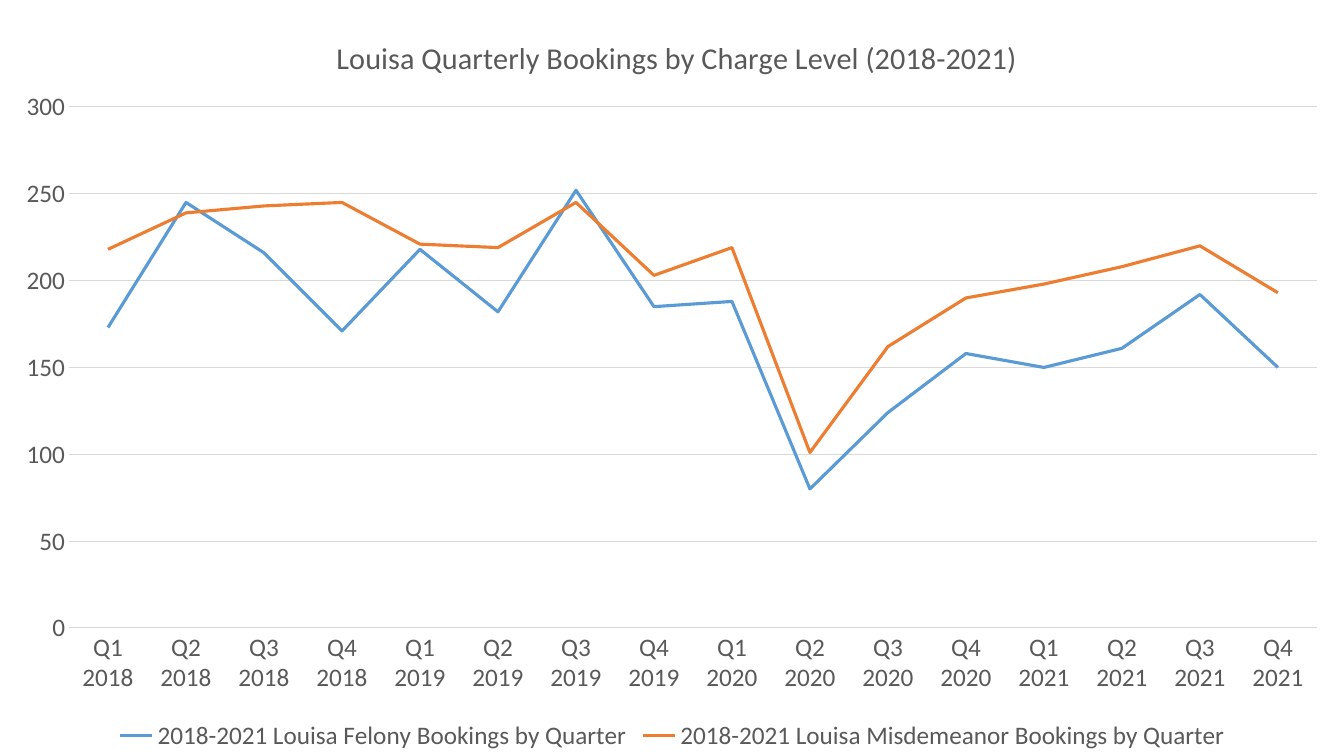
from lxml import etree
from pptx import Presentation
from pptx import util as u
from pptx.chart.data import CategoryChartData
from pptx.dml.color import RGBColor
from pptx.enum import chart as charts
from pptx.oxml.ns import qn

PX = 914400 / 100.8
WIDTH, HEIGHT = 1344, 756
COLORS = {"felony": "5B9BD5", "misdemeanor": "ED7D31", "text": "595959", "grid": "D9D9D9"}
TITLE = "Louisa Quarterly Bookings by Charge Level (2018-2021)"
QUARTERS = [f"Q{quarter} {year}" for year in range(2018, 2022) for quarter in range(1, 5)]
BOOKINGS = {
    "felony": [173, 245, 216, 171, 218, 182, 252, 185, 188, 80, 124, 158, 150, 161, 192, 150],
    "misdemeanor": [218, 239, 243, 245, 221, 219, 245, 203, 219, 101, 162, 190, 198, 208, 220, 193],
}


def px(length):
    """Turn pixels into EMU."""
    return u.Emu(round(length * PX))


def style_font(font, size=18):
    """Apply the chart's typeface, size and text colour."""
    font.name = "Calibri"
    font.size = u.Pt(size)
    font.bold = False
    font.color.rgb = RGBColor.from_string(COLORS["text"])


def style_line(line, color, width):
    """Colour a line and set its width in points."""
    line.color.rgb = RGBColor.from_string(COLORS[color])
    line.width = u.Pt(width)


def place(element, index, left, top, width=None, height=None):
    """Fix the position of a chart part, and its size if given."""
    for old in element.findall(qn("c:layout")):
        element.remove(old)
    layout = etree.Element(qn("c:layout"))
    manual = etree.SubElement(layout, qn("c:manualLayout"))
    settings = [("xMode", "edge"), ("yMode", "edge"), ("x", left / WIDTH), ("y", top / HEIGHT)]
    if width:
        settings.insert(0, ("layoutTarget", "inner"))
        settings += [("w", width / WIDTH), ("h", height / HEIGHT)]
    for tag, value in settings:
        etree.SubElement(manual, qn(f"c:{tag}"), val=str(value))
    element.insert(index, layout)


def add_bookings_chart(slide):
    """Add the line chart with one series per charge level."""
    data = CategoryChartData()
    data.categories = QUARTERS
    for level, values in BOOKINGS.items():
        data.add_series(f"2018-2021 Louisa {level.title()} Bookings by Quarter", values)
    frame = slide.shapes.add_chart(
        charts.XL_CHART_TYPE.LINE, 0, 0, px(WIDTH), px(HEIGHT), data)
    chart = frame.chart
    style_font(chart.font)
    chart.plots[0].vary_by_categories = False
    for series, level in zip(chart.plots[0].series, BOOKINGS):
        series.smooth = False
        series.marker.style = charts.XL_MARKER_STYLE.NONE
        style_line(series.format.line, level, 2.25)
    place(chart._chartSpace.chart.plotArea, 0, 69, 107, 1248, 521)
    return chart


def style_axes(chart):
    """Set up the quarter axis and the bookings axis."""
    for axis in (chart.category_axis, chart.value_axis):
        axis.major_tick_mark = axis.minor_tick_mark = charts.XL_TICK_MARK.NONE
        style_font(axis.tick_labels.font)
    style_line(chart.category_axis.format.line, "grid", 0.75)
    bookings = chart.value_axis
    bookings.minimum_scale, bookings.maximum_scale, bookings.major_unit = 0, 300, 50
    bookings.format.line.fill.background()
    style_line(bookings.major_gridlines.format.line, "grid", 0.75)


def add_title(chart):
    """Add the chart title."""
    chart.has_title = True
    title = chart.chart_title
    title.text_frame.text = TITLE
    style_font(title.text_frame.paragraphs[0].font, 21.6)
    place(title._element, 1, 331, 31)


def add_legend(chart):
    """Add the legend along the bottom edge."""
    chart.has_legend = True
    legend = chart.legend
    legend.position = charts.XL_LEGEND_POSITION.BOTTOM
    legend.include_in_layout = False
    style_font(legend.font)
    place(legend._element, 1, 112, 715)


def main():
    """Build and save the slide."""
    presentation = Presentation()
    presentation.slide_width, presentation.slide_height = px(WIDTH), px(HEIGHT)
    slide = presentation.slides.add_slide(presentation.slide_layouts[6])
    chart = add_bookings_chart(slide)
    style_axes(chart)
    add_title(chart)
    add_legend(chart)
    presentation.save("out.pptx")


if __name__ == "__main__":
    main()
